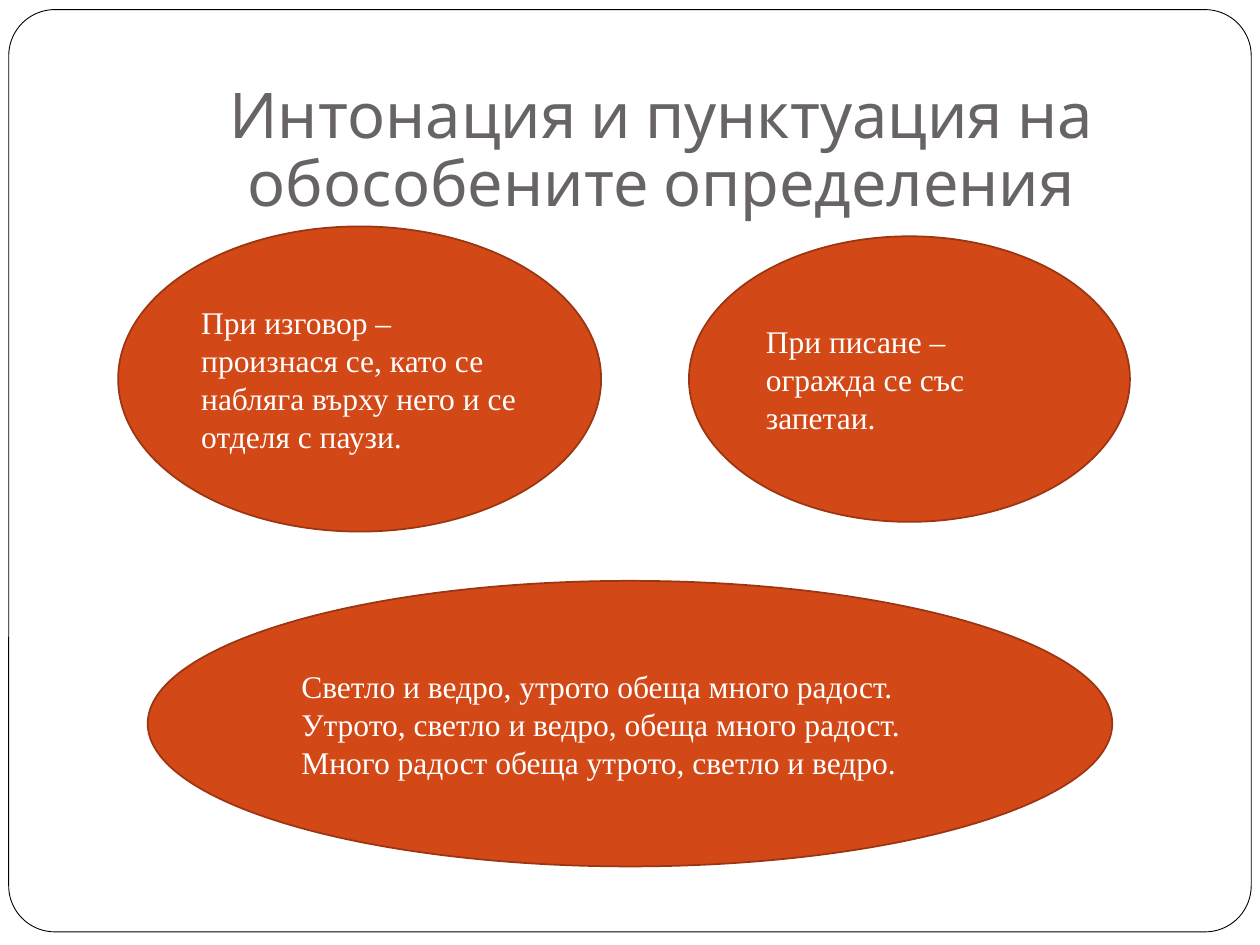
"""Build a slide on the intonation and punctuation of detached attributes."""
from pptx import Presentation
from pptx.dml.color import RGBColor
from pptx.enum.shapes import MSO_SHAPE
from pptx.enum.text import MSO_ANCHOR, MSO_AUTO_SIZE, PP_ALIGN
from pptx.util import Pt


def color(hex_string):
    return RGBColor.from_string(hex_string)


def add_filled_shape(slide, kind, bounds, fill, line, line_width):
    shape = slide.shapes.add_shape(kind, *[Pt(length) for length in bounds])
    shape.shadow.inherit = False
    shape.fill.solid()
    shape.fill.fore_color.rgb = color(fill)
    shape.line.color.rgb = color(line)
    shape.line.width = Pt(line_width)
    return shape


presentation = Presentation()
presentation.slide_width = Pt(720)
presentation.slide_height = Pt(540)
slide = presentation.slides.add_slide(presentation.slide_layouts[5])

title = slide.shapes.title
title.left, title.top, title.width, title.height = Pt(72), Pt(28.1), Pt(612), Pt(101.5)
title.text = "Интонация и пунктуация на обособените определения"
title_frame = title.text_frame
title_frame.word_wrap = True
title_frame.auto_size = MSO_AUTO_SIZE.NONE
title_frame.vertical_anchor = MSO_ANCHOR.BOTTOM
title_frame.margin_bottom = Pt(3.6)
paragraph = title_frame.paragraphs[0]
paragraph.alignment = PP_ALIGN.CENTER
paragraph.line_spacing = 0.9
paragraph.font.name = "Cabin"
paragraph.font.size = Pt(36)
paragraph.font.color.rgb = color("696464")

border = add_filled_shape(
    slide, MSO_SHAPE.ROUNDED_RECTANGLE, (5, 5.5, 710, 527), "FFFFFF", "000000", 0.5
)
border.adjustments[0] = 0.05
title.element.addprevious(border.element)

ellipses = [
    ((67.5, 129.4, 276, 174.4),
     ["При изговор – произнася се, като се набляга върху него и се отделя с паузи."]),
    ((393.7, 135, 252, 163.2),
     ["При писане – огражда се със запетаи."]),
    ((84.4, 331.9, 551.2, 163.2),
     ["Светло и ведро, утрото обеща много радост.",
      "Утрото, светло и ведро, обеща много радост.",
      "Много радост обеща утрото, светло и ведро."]),
]
for bounds, lines in ellipses:
    ellipse = add_filled_shape(slide, MSO_SHAPE.OVAL, bounds, "D34817", "9C3511", 1)
    text_frame = ellipse.text_frame
    text_frame.word_wrap = True
    text_frame.vertical_anchor = MSO_ANCHOR.MIDDLE
    text_frame.text = "\n".join(lines)
    for paragraph in text_frame.paragraphs:
        paragraph.alignment = PP_ALIGN.LEFT
        paragraph.font.name = "Times New Roman"
        paragraph.font.size = Pt(18)
        paragraph.font.color.rgb = color("FFFFFF")

presentation.save("out.pptx")
